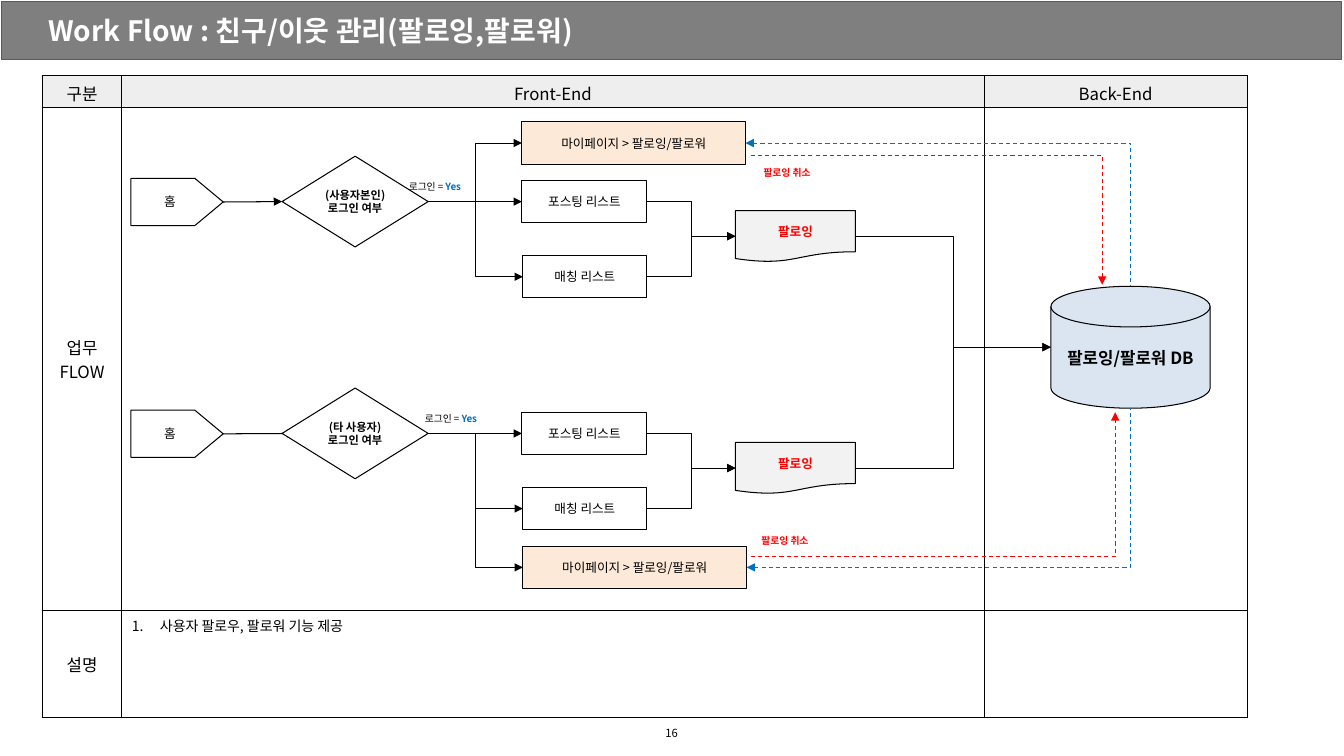
from dataclasses import dataclass

from pptx import Presentation
from pptx.dml.color import RGBColor
from pptx.enum import dml, shapes, text
from pptx.oxml import ns
from pptx.util import Pt
from lxml import etree

KIND = shapes.MSO_SHAPE
TOP, LEFT, BOTTOM, RIGHT = range(4)


@dataclass(frozen=True)
class Theme:
    font: str = "Noto Sans CJK KR"
    home_font: str = "Arial"
    black: str = "000000"
    white: str = "FFFFFF"
    bar: str = "7F7F7F"
    bar_edge: str = "595959"
    header: str = "EEEEEE"
    paper: str = "F2F2F2"
    peach: str = "FDE9D8"
    pale_blue: str = "DAE5F1"
    blue: str = "0070C0"
    red: str = "FF0000"
    title: float = 20
    heading: float = 12
    note: float = 10
    body: float = 9
    small: float = 8
    label: float = 7
    line: float = 0.75
    border: float = 1


def add_child(parent, tag, **attributes):
    return etree.SubElement(parent, ns.qn(tag), attributes)


def write(frame, paragraphs, theme, size, color=None, bold=False, font=None,
          align=text.PP_ALIGN.CENTER):
    for index, content in enumerate(paragraphs):
        para = frame.paragraphs[0] if index == 0 else frame.add_paragraph()
        para.alignment = align
        spans = [(content, color, bold)] if isinstance(content, str) else content
        for words, span_color, span_bold in spans:
            span = para.add_run()
            span.text = words
            span.font.size = Pt(size)
            span.font.bold = span_bold
            span.font.name = font or theme.font
            span.font.color.rgb = RGBColor.from_string(span_color or theme.black)
            add_child(span.font._element, "a:ea", typeface=theme.font)


class Flow:
    def __init__(self, page, theme):
        self.page = page
        self.theme = theme

    def shape(self, kind, place, paragraphs=(), fill=None, edge=None, size=None,
              inset=7.2, **style):
        box = self.page.shapes.add_shape(kind, *map(Pt, place))
        box.shadow.inherit = False
        if fill:
            box.fill.solid()
            box.fill.fore_color.rgb = RGBColor.from_string(fill)
        else:
            box.fill.background()
        box.line.color.rgb = RGBColor.from_string(edge or self.theme.black)
        box.line.width = Pt(self.theme.line)
        frame = box.text_frame
        frame.margin_left = frame.margin_right = Pt(inset)
        frame.margin_top = frame.margin_bottom = Pt(3.6)
        frame.vertical_anchor = text.MSO_ANCHOR.MIDDLE
        write(frame, paragraphs, self.theme, size or self.theme.body, **style)
        return box

    def label(self, place, content, size, inset=7.2, align=text.PP_ALIGN.LEFT, **style):
        frame = self.page.shapes.add_textbox(*map(Pt, place)).text_frame
        frame.word_wrap = True
        frame.margin_left = Pt(inset)
        frame.vertical_anchor = text.MSO_ANCHOR.MIDDLE
        write(frame, [content], self.theme, size, align=align, **style)

    def connect(self, begin, end, kind=shapes.MSO_CONNECTOR.ELBOW, color=None,
                dashed=False, corner=False, arrow="a:tailEnd"):
        points = [place if isinstance(place[0], (int, float)) else (0, 0)
                  for place in (begin, end)]
        line = self.page.shapes.add_connector(kind, *map(Pt, points[0] + points[1]))
        if not isinstance(begin[0], (int, float)):
            line.begin_connect(*begin)
        if not isinstance(end[0], (int, float)):
            line.end_connect(*end)
        line.line.color.rgb = RGBColor.from_string(color or self.theme.black)
        line.line.width = Pt(self.theme.line)
        if dashed:
            line.line.dash_style = dml.MSO_LINE.DASH
        properties = line._element.spPr
        if corner:
            properties.find(ns.qn("a:prstGeom")).set("prst", "bentConnector2")
        add_child(properties.find(ns.qn("a:ln")), arrow, type="triangle")
        add_child(properties, "a:effectLst")

    def cell(self, cell, paragraphs, fill=None, numbered=False):
        theme = self.theme
        properties = cell._tc.get_or_add_tcPr()
        for side in ("a:lnL", "a:lnR", "a:lnT", "a:lnB"):
            border = add_child(properties, side, w=str(Pt(theme.border)))
            add_child(add_child(border, "a:solidFill"), "a:srgbClr", val=theme.black)
        if fill:
            cell.fill.solid()
            cell.fill.fore_color.rgb = RGBColor.from_string(fill)
        else:
            cell.fill.background()
        if not numbered:
            cell.vertical_anchor = text.MSO_ANCHOR.MIDDLE
            write(cell.text_frame, paragraphs, theme, theme.heading)
            return
        write(cell.text_frame, paragraphs, theme, theme.note, align=text.PP_ALIGN.LEFT)
        for para in cell.text_frame.paragraphs:
            settings = para._p.get_or_add_pPr()
            settings.set("marL", str(Pt(20)))
            settings.set("indent", str(-Pt(20)))
            add_child(settings, "a:buAutoNum", type="arabicPeriod")

    def table(self, place, widths, heights, rows):
        grid = self.page.shapes.add_table(
            len(heights), len(widths), *map(Pt, place + (sum(widths), sum(heights)))).table
        grid.first_row = grid.horz_banding = False
        for column, width in zip(grid.columns, widths):
            column.width = Pt(width)
        for row, (height, contents) in enumerate(zip(heights, rows)):
            grid.rows[row].height = Pt(height)
            for column, paragraphs in enumerate(contents):
                self.cell(grid.cell(row, column), paragraphs,
                          fill=self.theme.header if row == 0 else None,
                          numbered=(row, column) == (2, 1))

    def lane(self, top, question, label_left, my_page_place, cancel_place, home_end=None):
        theme = self.theme
        straight = shapes.MSO_CONNECTOR.STRAIGHT
        home = self.shape(KIND.PENTAGON, (93.6, top + 15.8, 65.9, 33.8), ["홈"],
                          font=theme.home_font)
        home.adjustments[0] = 0.6
        if home_end:
            self.connect((home, RIGHT), home_end, straight)
        login = self.shape(KIND.FLOWCHART_DECISION, (201.6, top, 104.4, 64.8),
                           [question, "로그인 여부"], theme.white, size=theme.small,
                           bold=True, inset=2.9)
        if not home_end:
            self.connect((home, RIGHT), (login, LEFT), straight)
        posting = self.shape(KIND.FLOWCHART_PROCESS, (373, top + 17.3, 89.3, 30.2),
                             ["포스팅 리스트"])
        matching = self.shape(KIND.FLOWCHART_PROCESS, (373.7, top + 71, 88.6, 30.2),
                              ["매칭 리스트"])
        my_page = self.shape(KIND.FLOWCHART_PROCESS, my_page_place + (159.8, 30.2),
                             ["마이페이지 > 팔로잉/팔로워"], theme.peach)
        follow = self.shape(KIND.FLOWCHART_DOCUMENT, (525.6, top + 38.8, 85.7, 36.7),
                            ["팔로잉"], theme.paper, color=theme.red, bold=True)
        self.label((label_left, top + 13.7, 62.6, 15.8),
                   [("로그인 = ", theme.black, False), ("Yes", theme.blue, True)], theme.label)
        self.label(cancel_place + (62.6, 15.8), "팔로잉 취소", theme.label,
                   color=theme.red, bold=True)
        self.connect((login, RIGHT), (posting, LEFT), straight)
        for target in (matching, my_page):
            self.connect((login, RIGHT), (target, LEFT))
        for listing in (posting, matching):
            self.connect((listing, RIGHT), (follow, LEFT))
        self.connect((611.3, top + 57.2), (751, 248))


def main():
    theme = Theme()
    deck = Presentation()
    deck.slide_width, deck.slide_height = Pt(960.5), Pt(540)
    page = deck.slides.add_slide(deck.slide_layouts[6])
    flow = Flow(page, theme)

    flow.shape(KIND.RECTANGLE, (1.4, 1.4, 957.6, 41), fill=theme.bar, edge=theme.bar_edge)
    flow.label((20.9, 0, 918.7, 43.2), "Work Flow : 친구/이웃 관리(팔로잉,팔로워)",
               theme.title, inset=13.7, color=theme.white, bold=True)
    flow.table((30.2, 54), (56.9, 616.3, 187.9), (23, 359.3, 76.3), [
        [["구분"], ["Front-End"], ["Back-End"]],
        [["업무", "FLOW"], [], []],
        [["설명"], ["사용자 팔로우, 팔로워 기능 제공"], []],
    ])
    flow.label((0, 509.8, 960, 28), "16", theme.small, align=text.PP_ALIGN.CENTER)
    flow.shape(KIND.FLOWCHART_MAGNETIC_DISK, (751, 204.5, 113.8, 87.1),
               ["팔로잉/팔로워 DB"], theme.pale_blue, size=theme.heading, bold=True)

    flow.lane(111.6, "(사용자본인)", 285.1, (373, 87.1), (538.6, 115.2))
    flow.lane(277.2, "(타 사용자)", 296.6, (373.7, 390.2), (537.1, 378), home_end=(211, 309.6))

    for begin, end in (((532.8, 102.2), (808.2, 204.5)), ((533.5, 405.3), (808.2, 291.6))):
        flow.connect(begin, end, color=theme.blue, dashed=True, corner=True, arrow="a:headEnd")
    for begin, end in (((536.4, 110.9), (787.7, 203.4)), ((536.4, 397.4), (797, 294.5))):
        flow.connect(begin, end, color=theme.red, dashed=True, corner=True)

    deck.save("out.pptx")


if __name__ == "__main__":
    main()
